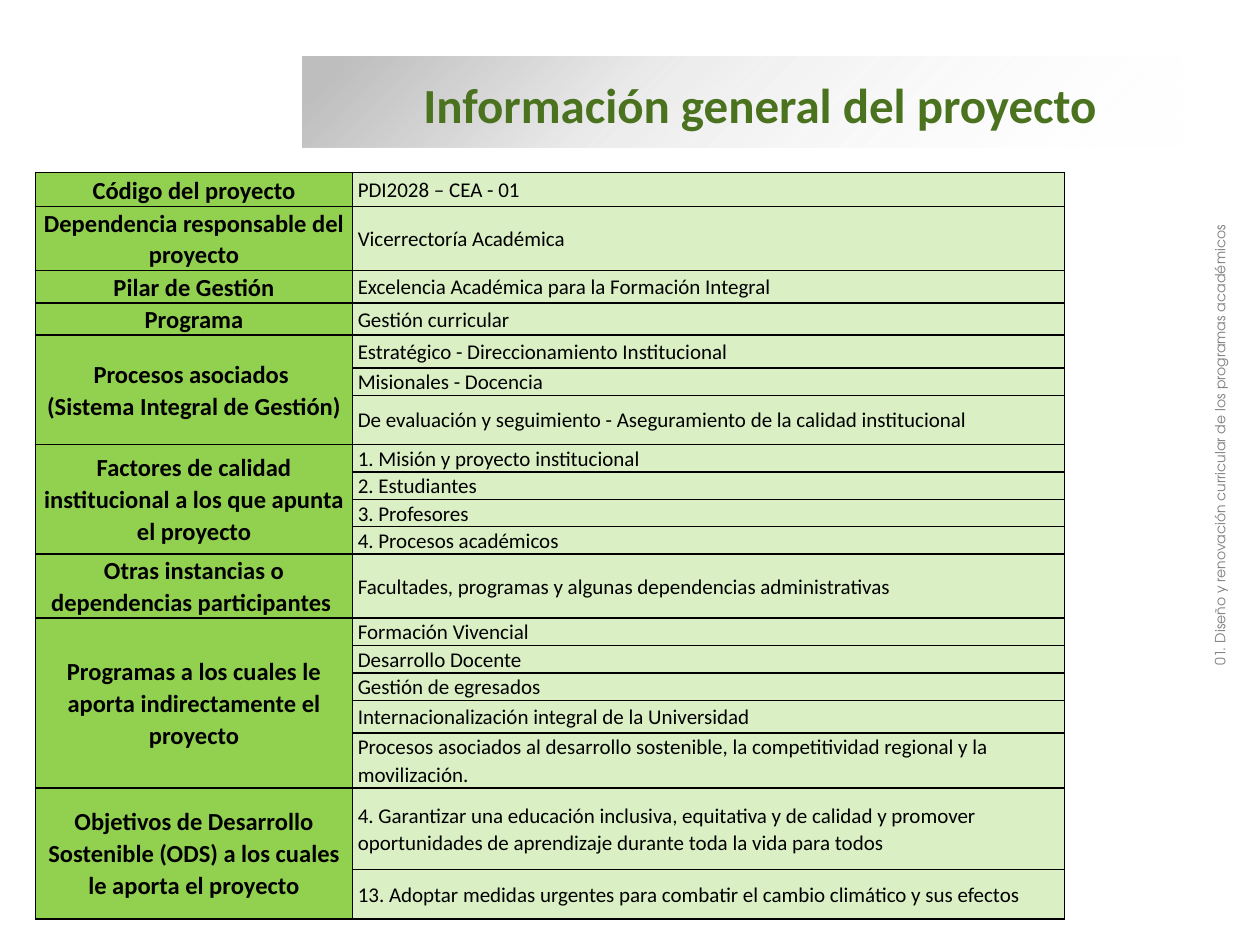
import pptx
import pptx.dml.color
import pptx.enum.shapes
import pptx.enum.text
import pptx.oxml.ns
import pptx.util
from lxml import etree

Inches = pptx.util.Inches
Pt = pptx.util.Pt
qn = pptx.oxml.ns.qn
ALIGN = pptx.enum.text.PP_ALIGN
ANCHOR = pptx.enum.text.MSO_ANCHOR
FIT = pptx.enum.text.MSO_AUTO_SIZE

COLORS = {
    "label": "92D050",
    "value": "DAEFC3",
    "text": "000000",
    "border": "000000",
    "title": "4B731F",
    "side": "808080",
    "band": "BFBFBF",
    "fade": "FFFFFF",
}
BAND_STOPS = [(5, "band", 100), (37, "band", 31), (100, "fade", 0)]
COLUMNS = [2.52, 5.65]
SECTIONS = [
    ("Código del proyecto", [("PDI2028 – CEA - 01", 0.27)]),
    ("Dependencia responsable del proyecto", [("Vicerrectoría Académica", 0.27)]),
    ("Pilar de Gestión", [("Excelencia Académica para la Formación Integral", 0.26)]),
    ("Programa", [("Gestión curricular", 0.17)]),
    ("Procesos asociados \v(Sistema Integral de Gestión)", [
        ("Estratégico - Direccionamiento Institucional", 0.26),
        ("Misionales - Docencia", 0.13),
        ("De evaluación y seguimiento - Aseguramiento de la calidad institucional", 0.39),
    ]),
    ("Factores de calidad institucional a los que apunta el proyecto", [
        ("1. Misión y proyecto institucional", 0.17),
        ("2. Estudiantes", 0.13),
        ("3. Profesores", 0.17),
        ("4. Procesos académicos", 0.17),
    ]),
    ("Otras instancias o dependencias participantes ", [
        ("Facultades, programas y algunas dependencias administrativas", 0.26),
    ]),
    ("Programas a los cuales le aporta indirectamente el proyecto", [
        ("Formación Vivencial", 0.13),
        ("Desarrollo Docente", 0.13),
        ("Gestión de egresados", 0.13),
        ("Internacionalización integral de la Universidad", 0.26),
        ("Procesos asociados al desarrollo sostenible, la competitividad regional "
         "y la movilización.", 0.39),
    ]),
    ("Objetivos de Desarrollo Sostenible (ODS) a los cuales le aporta el proyecto", [
        ("4. Garantizar una educación inclusiva, equitativa y de calidad y promover "
         "oportunidades de aprendizaje durante toda la vida para todos", 0.65),
        ("13. Adoptar medidas urgentes para combatir el cambio climático y sus efectos", 0.39),
    ]),
]


def rgb(name):
    return pptx.dml.color.RGBColor.from_string(COLORS[name])


def write_text(frame, text, size, color="text", font="Calibri", bold=False,
               align=ALIGN.LEFT, spacing=None):
    para = frame.paragraphs[0]
    para.text = text
    para.alignment = align
    para.line_spacing = spacing
    for span in para.runs:
        span.font.name = font
        span.font.size = Pt(size)
        span.font.bold = bold
        span.font.color.rgb = rgb(color)


def add_borders(cell):
    properties = cell._tc.get_or_add_tcPr()
    for position, side in enumerate(("lnL", "lnR", "lnT", "lnB")):
        line = etree.Element(qn(f"a:{side}"), w=str(Pt(1)))
        fill = etree.SubElement(line, qn("a:solidFill"))
        etree.SubElement(fill, qn("a:srgbClr"), val=COLORS["border"])
        properties.insert(position, line)


def format_cell(cell, fill):
    cell.fill.solid()
    cell.fill.fore_color.rgb = rgb(fill)
    cell.vertical_anchor = ANCHOR.MIDDLE
    cell.margin_left = cell.margin_right = Inches(0.04)
    cell.margin_top = cell.margin_bottom = 0
    add_borders(cell)


def add_project_table(page, left, top, width, height):
    row_count = sum(len(entries) for label, entries in SECTIONS)
    holder = page.shapes.add_table(row_count, 2, left, top, width, height)
    table = holder.table
    for column, column_width in zip(table.columns, COLUMNS):
        column.width = Inches(column_width)
    for row in range(row_count):
        format_cell(table.cell(row, 0), "label")
        format_cell(table.cell(row, 1), "value")
    row = 0
    for label, entries in SECTIONS:
        label_cell = table.cell(row, 0)
        if len(entries) > 1:
            label_cell.merge(table.cell(row + len(entries) - 1, 0))
        write_text(label_cell.text_frame, label, 14, bold=True,
                   align=ALIGN.CENTER, spacing=1.07)
        for text, row_height in entries:
            table.rows[row].height = Inches(row_height)
            write_text(table.cell(row, 1).text_frame, text, 12, spacing=1.07)
            row += 1
    holder.height = height


def add_title_band(page, left, top, width, height):
    band = page.shapes.add_shape(
        pptx.enum.shapes.MSO_SHAPE.RECTANGLE, left, top, width, height)
    band.shadow.inherit = False
    band.line.fill.background()
    band.fill.gradient()
    band.fill.gradient_angle = 315
    stops = band._element.spPr.find(".//" + qn("a:gsLst"))
    for stop in list(stops):
        stops.remove(stop)
    for position, color, opacity in BAND_STOPS:
        stop = etree.SubElement(stops, qn("a:gs"), pos=str(position * 1000))
        shade = etree.SubElement(stop, qn("a:srgbClr"), val=COLORS[color])
        etree.SubElement(shade, qn("a:alpha"), val=str(opacity * 1000))

    title = page.shapes.title
    title.left, title.top = left + Inches(0.86), top + Inches(0.09)
    title.width, title.height = Inches(6.2), Inches(0.57)
    frame = title.text_frame
    frame.word_wrap = True
    frame.auto_size = FIT.SHAPE_TO_FIT_TEXT
    frame.vertical_anchor = ANCHOR.MIDDLE
    write_text(frame, "Información general del proyecto", 28, color="title", bold=True)
    band._element.addnext(title._element)


def add_side_label(page, left, top, width, height):
    box = page.shapes.add_textbox(left, top, width, height)
    box.rotation = 270
    box.text_frame.word_wrap = True
    box.text_frame.auto_size = FIT.SHAPE_TO_FIT_TEXT
    write_text(box.text_frame,
               "01. Diseño y renovación curricular de los programas académicos",
               8, color="side", font="TeX Gyre Adventor", align=ALIGN.CENTER)


def main():
    deck = pptx.Presentation()
    deck.slide_width, deck.slide_height = Inches(10), Inches(7.5)
    page = deck.slides.add_slide(deck.slide_layouts[5])
    add_project_table(page, Inches(0.28), Inches(1.37), Inches(8.17), Inches(5.89))
    add_title_band(page, Inches(2.4), Inches(0.45), Inches(6.98), Inches(0.72))
    add_side_label(page, Inches(7.33), Inches(3.35), Inches(4.84), Inches(0.37))
    deck.save("out.pptx")


if __name__ == "__main__":
    main()
